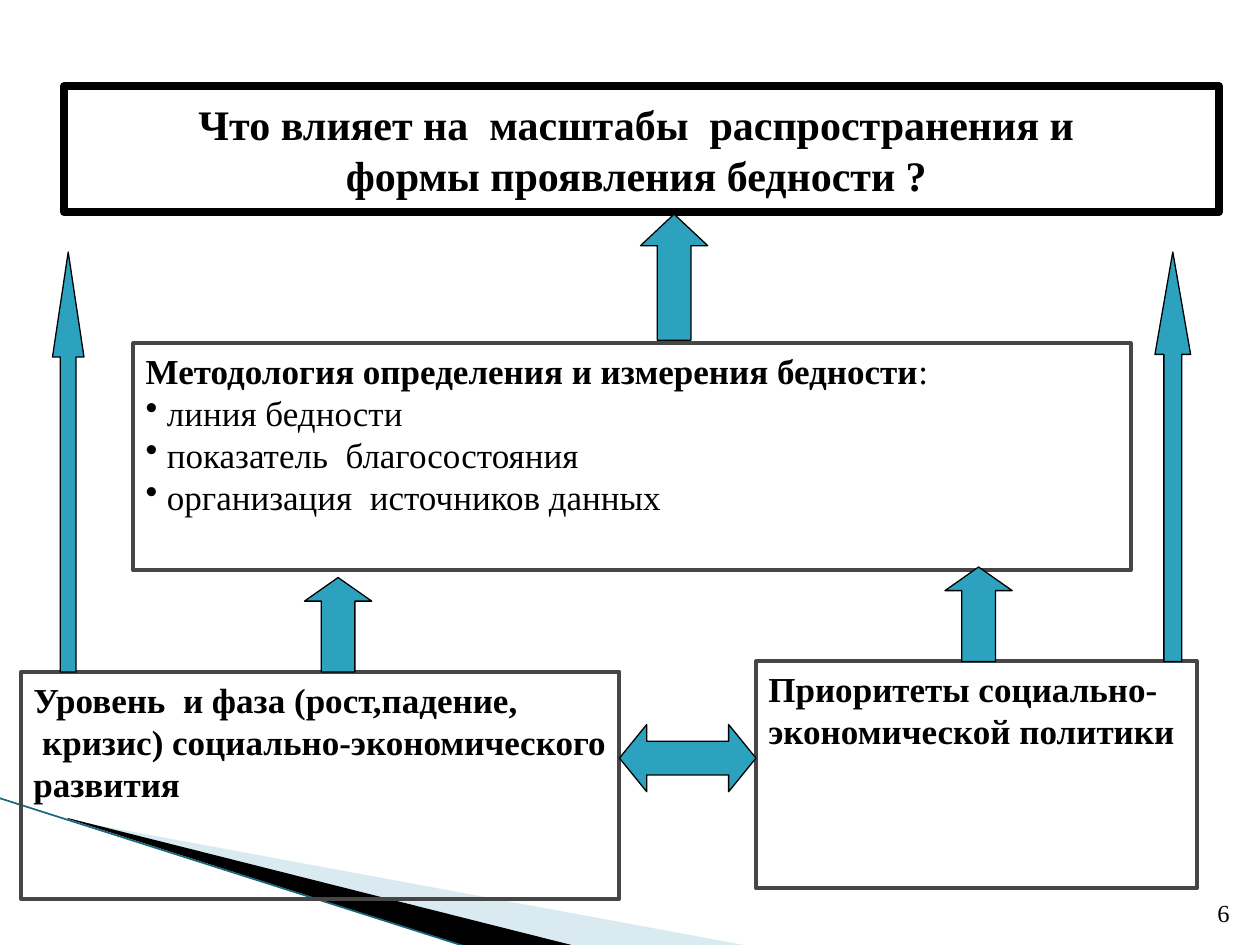
from dataclasses import dataclass

from lxml import etree
from pptx import Presentation
from pptx.dml.color import RGBColor
from pptx.enum.shapes import MSO_CONNECTOR, MSO_SHAPE
from pptx.enum.text import MSO_ANCHOR, PP_ALIGN
from pptx.oxml.ns import qn
from pptx.util import Inches, Pt

RECT, UP, BOTH_WAYS = MSO_SHAPE.RECTANGLE, MSO_SHAPE.UP_ARROW, MSO_SHAPE.LEFT_RIGHT_ARROW
STRAIGHT = MSO_CONNECTOR.STRAIGHT
TOP, MIDDLE, BOTTOM = MSO_ANCHOR.TOP, MSO_ANCHOR.MIDDLE, MSO_ANCHOR.BOTTOM
LEFT, CENTER, RIGHT = PP_ALIGN.LEFT, PP_ALIGN.CENTER, PP_ALIGN.RIGHT
COLS, ROWS = 120, 90


@dataclass(frozen=True)
class Theme:
    font: str = "Times New Roman"
    ink: str = "000000"
    paper: str = "FFFFFF"
    frame: str = "464646"
    arrow: str = "2DA2BF"
    wedge: str = "A0CBDC"
    edge: str = "16697A"
    title: int = 24
    body: int = 20
    number: int = 14


class Deck:
    """Draws styled elements on one slide, measured in grid columns and rows."""

    def __init__(self, theme):
        self.theme = theme
        self.prs = Presentation()
        self.prs.slide_width, self.prs.slide_height = Inches(10), Inches(7.5)
        self.s = self.prs.slides.add_slide(self.prs.slide_layouts[6])

    def x(self, col):
        return round(self.prs.slide_width * col / COLS)

    def y(self, row):
        return round(self.prs.slide_height * row / ROWS)

    def place(self, col, row, w, h):
        return self.x(col), self.y(row), self.x(w), self.y(h)

    def paint(self, sp, fill=None, line=None, width=0.75):
        sp.shadow.inherit = False
        if fill:
            sp.fill.solid()
            sp.fill.fore_color.rgb = RGBColor.from_string(fill)
        else:
            sp.fill.background()
        if line:
            sp.line.color.rgb = RGBColor.from_string(line)
            sp.line.width = Pt(width)
        else:
            sp.line.fill.background()

    def add_text(self, sp, paragraphs, size, align=LEFT, anchor=TOP, wrap=True):
        tf = sp.text_frame
        tf.word_wrap, tf.vertical_anchor = wrap, anchor
        for i, (runs, bullet) in enumerate(paragraphs):
            p = tf.add_paragraph() if i else tf.paragraphs[0]
            p.alignment = align
            if bullet:
                etree.SubElement(p._p.get_or_add_pPr(), qn("a:buChar"), char="•")
            for text, bold in runs:
                r = p.add_run()
                r.text = text
                r.font.name, r.font.size, r.font.bold = self.theme.font, Pt(size), bold
                r.font.color.rgb = RGBColor.from_string(self.theme.ink)

    def wedge(self, points, fill, alpha=None):
        pts = [(self.x(c), self.y(r)) for c, r in points]
        builder = self.s.shapes.build_freeform(*pts[0])
        builder.add_line_segments(pts[1:], close=True)
        sp = builder.convert_to_shape()
        self.paint(sp, fill)
        if alpha:
            color = sp._element.spPr.find(f"{qn('a:solidFill')}/{qn('a:srgbClr')}")
            etree.SubElement(color, qn("a:alpha"), val=str(alpha * 1000))

    def line(self, start, end, color, width):
        (c1, r1), (c2, r2) = start, end
        cn = self.s.shapes.add_connector(STRAIGHT, self.x(c1), self.y(r1), self.x(c2), self.y(r2))
        cn.line.color.rgb = RGBColor.from_string(color)
        cn.line.width = Pt(width)
        etree.SubElement(cn._element.spPr, qn("a:effectLst"))

    def box(self, at, paragraphs):
        sp = self.s.shapes.add_shape(RECT, *self.place(*at))
        self.paint(sp, line=self.theme.frame, width=2.25)
        self.add_text(sp, paragraphs, self.theme.body)

    def title(self, at, lines):
        sp = self.s.shapes.add_shape(RECT, *self.place(*at))
        self.paint(sp, self.theme.paper, self.theme.ink, 4.5)
        self.add_text(sp, [([(t, True)], False) for t in lines], self.theme.title,
                      CENTER, MIDDLE, False)

    def arrow(self, at, head, kind=UP):
        sp = self.s.shapes.add_shape(kind, *self.place(*at))
        sp.adjustments[0], sp.adjustments[1] = 0.5, head / min(at[2:])
        self.paint(sp, self.theme.arrow, self.theme.ink)

    def number(self, at, text):
        sp = self.s.shapes.add_textbox(*self.place(*at))
        self.add_text(sp, [([(text, False)], False)], self.theme.number, RIGHT, BOTTOM)


def main():
    theme = Theme()
    deck = Deck(theme)
    deck.wedge([(6.6, 78.1), (71.4, 90.1), (54.7, 90.1), (6.6, 78)], theme.wedge, 40)
    deck.wedge([(6.4, 77.9), (54.8, 90.1), (44.6, 90.2), (6.5, 78)], theme.ink)
    deck.line((-0.1, 76), (44.5, 90.2), theme.edge, 0.95)
    deck.number((113.5, 84.1, 4.8, 4.8), "6")

    deck.title((6.1, 8.2, 110, 12), ["Что влияет на  масштабы  распространения и ",
                                     "формы проявления бедности ? "])
    level = ["Уровень  и фаза (рост,падение,", " кризис) социально-экономического", "развития"]
    priorities = ["Приоритеты социально-", "экономической политики"]
    for at, lines in (((2, 64, 57, 21.6), level), ((72, 63, 42, 21.6), priorities)):
        deck.box(at, [([(t, True)], False) for t in lines])
    deck.arrow((59, 69, 13, 6.4), 2.6, BOTH_WAYS)

    measures = [" линия бедности", " показатель  благосостояния", " организация  источников данных"]
    heading = [("Методология определения и измерения бедности", True), (":", False)]
    deck.box((12.7, 32.7, 95, 21.6),
             [(heading, False)] + [([(t, False)], True) for t in measures])

    for col, row, w, h, head in ((29, 55, 6.4, 9, 2.25), (61, 20.4, 6.4, 12, 3),
                                 (90, 54, 6.4, 9, 2.25), (5, 24, 3, 40, 10),
                                 (110, 24, 3.4, 39, 9.75)):
        deck.arrow((col, row, w, h), head)
    deck.prs.save("out.pptx")


if __name__ == "__main__":
    main()
